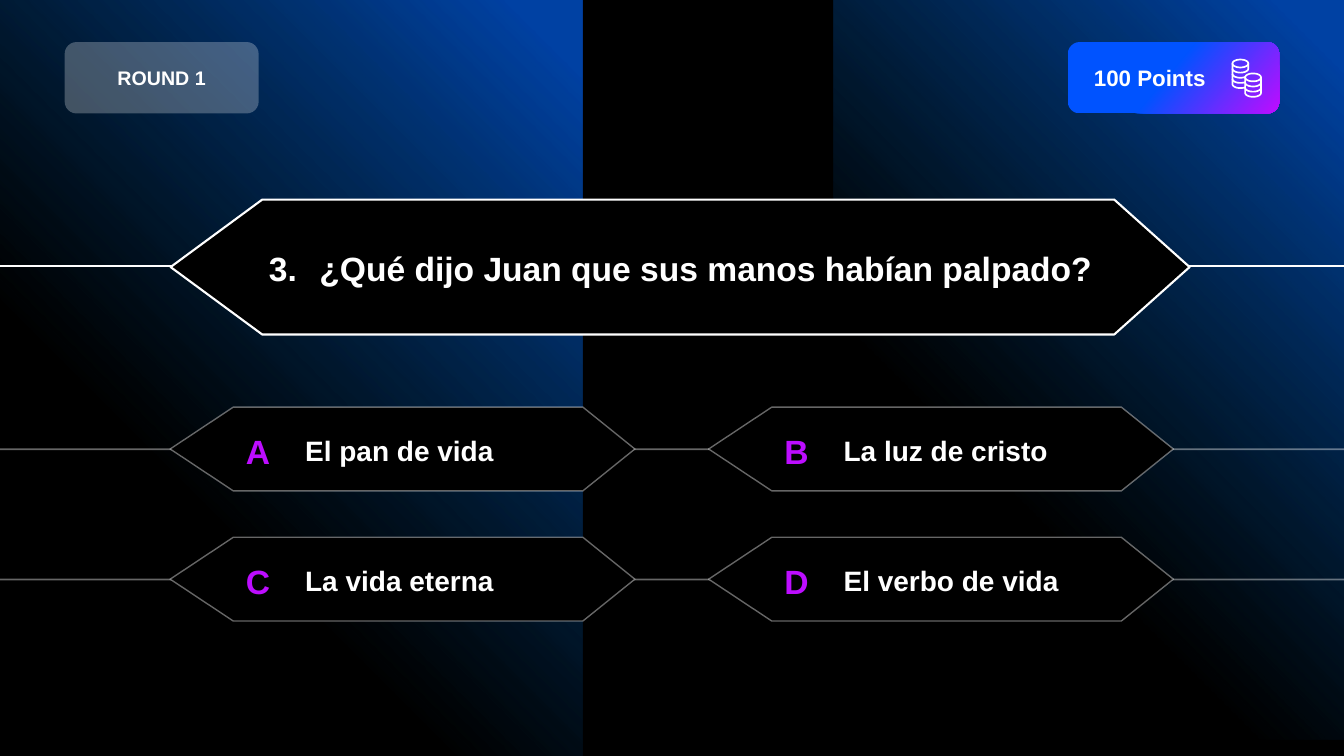
import math
from dataclasses import dataclass

from lxml import etree
from pptx import Presentation
from pptx.dml.color import RGBColor
from pptx.enum import shapes, text
from pptx.oxml import ns
from pptx.util import Cm, Pt


@dataclass(frozen=True)
class Theme:
    font: str = "Arial"
    black: str = "000000"
    white: str = "FFFFFF"
    violet: str = "BD0DFF"
    blue: str = "0053FF"
    glow: str = "0066FF"
    glow_edge: str = "0070C0"
    large: int = 24
    answer: int = 20
    points: int = 16
    round: int = 14
    frame_line: float = 1.5
    answer_line: float = 1.25
    answer_frame: float = 1
    coin_line: float = 1.2
    faint: int = 40
    badge_alpha: int = 26


THEME = Theme()
SLIDE_WIDTH, SLIDE_HEIGHT = 33.87, 19.05
ANSWERS = [
    [("A", "El pan de vida"), ("B", "La luz de cristo")],
    [("C", "La vida eterna"), ("D", "El verbo de vida")],
]


def lengths(*values):
    return [Cm(value) for value in values]


def set_alpha(parent, percent):
    """Make every plain colour below the XML parent partly transparent."""
    for color in parent.iter(ns.qn("a:srgbClr")):
        etree.SubElement(color, ns.qn("a:alpha")).set("val", str(percent * 1000))


def paint(shape, color, alpha=100):
    shape.fill.solid()
    shape.fill.fore_color.rgb = RGBColor.from_string(color)
    if alpha < 100:
        set_alpha(shape.element.spPr.find(ns.qn("a:solidFill")), alpha)


def draw_line(shape, width, alpha=100):
    shape.line.color.rgb = RGBColor.from_string(THEME.white)
    shape.line.width = Pt(width)
    if alpha < 100:
        set_alpha(shape.element.spPr.find(ns.qn("a:ln")), alpha)


def paint_gradient(shape, stops, angle=None):
    """Fill with (position, colour, alpha) stops: linear, or round from top right."""
    gradient = etree.Element(ns.qn("a:gradFill"), rotWithShape="1")
    stop_list = etree.SubElement(gradient, ns.qn("a:gsLst"))
    for position, color, alpha in stops:
        stop = etree.SubElement(stop_list, ns.qn("a:gs"), pos=str(position * 1000))
        etree.SubElement(stop, ns.qn("a:srgbClr"), val=color)
        if alpha < 100:
            set_alpha(stop, alpha)
    if angle is None:
        circle = etree.SubElement(gradient, ns.qn("a:path"))
        circle.set("path", "circle")
        etree.SubElement(circle, ns.qn("a:fillToRect"), l="100000", b="100000")
    else:
        etree.SubElement(gradient, ns.qn("a:lin"), ang=str(angle * 60000), scaled="0")
    shape.element.spPr.find(ns.qn("a:prstGeom")).addnext(gradient)


def write(shape, wording, size, color=THEME.white, align=text.PP_ALIGN.LEFT):
    frame = shape.text_frame
    frame.word_wrap = True
    frame.vertical_anchor = text.MSO_ANCHOR.MIDDLE
    paragraph = frame.paragraphs[0]
    paragraph.alignment = align
    run = paragraph.add_run()
    run.text = wording
    run.font.name = THEME.font
    run.font.size = Pt(size)
    run.font.bold = True
    run.font.color.rgb = RGBColor.from_string(color)


def add_text(slide, box, wording, size, **style):
    write(slide.shapes.add_textbox(*lengths(*box)), wording, size, **style)


def add_plain_shape(slide, kind, box):
    shape = slide.shapes.add_shape(kind, *lengths(*box))
    shape.shadow.inherit = False
    shape.line.fill.background()
    return shape


def add_glow_panel(slide, box):
    panel = add_plain_shape(slide, shapes.MSO_SHAPE.RECTANGLE, box)
    paint_gradient(panel, [(0, THEME.glow, 63), (6, THEME.glow, 63),
                           (66, THEME.glow_edge, 0), (100, THEME.black, 0)])


def add_rail(slide, y, width, alpha=100):
    """Draw a horizontal line over the whole slide."""
    rail = slide.shapes.add_connector(
        shapes.MSO_CONNECTOR.STRAIGHT, *lengths(0, y, SLIDE_WIDTH, y))
    draw_line(rail, width, alpha)
    etree.SubElement(rail.element.spPr, ns.qn("a:effectLst"))


def add_frame(slide, box, left_tip, right_tip, width, alpha=100):
    """Draw a black hexagon whose two tips have their own lengths."""
    left, top, across, height = box
    right, middle, bottom = left + across, top + height / 2, top + height
    corners = [(left + left_tip, top), (right - right_tip, top), (right, middle),
               (right - right_tip, bottom), (left + left_tip, bottom)]
    builder = slide.shapes.build_freeform(*lengths(left, middle))
    builder.add_line_segments([lengths(*corner) for corner in corners])
    frame = builder.convert_to_shape()
    frame.shadow.inherit = False
    paint(frame, THEME.black)
    draw_line(frame, width, alpha)


def add_answer(slide, left, top, letter, answer):
    add_frame(slide, (left, top, 11.71, 2.11), 1.59, 1.31,
              THEME.answer_frame, THEME.faint)
    add_text(slide, (left + 3.15, top + 0.08, 8.4, 2.03), answer, THEME.answer)
    add_text(slide, (left + 1.55, top + 0.08, 1.32, 2.03), letter, THEME.large,
             color=THEME.violet, align=text.PP_ALIGN.CENTER)


def add_badge(slide, box):
    return add_plain_shape(slide, shapes.MSO_SHAPE.ROUNDED_RECTANGLE, box)


def coin_rim(center_x, center_y, start, end):
    """Give the points of an elliptical arc, in degrees, clockwise from the right."""
    step = 12 if end > start else -12
    angles = [math.radians(angle) for angle in range(start, end + step, step)]
    return [lengths(center_x + 0.2 * math.cos(angle), center_y + 0.1 * math.sin(angle))
            for angle in angles]


def add_coins(slide):
    coin_height = 0.13
    curves = []
    for center_x, top, coins, hidden_to in ((31.26, 1.6, 4, 48), (31.58, 1.95, 3, 0)):
        curves.append(coin_rim(center_x, top, 0, 360))
        for coin in range(1, coins + 1):
            end = 0 if coin == 1 else hidden_to
            rim = coin_rim(center_x, top + coin * coin_height, 180, end)
            side_top = top + (coin - 1) * coin_height
            curve = [lengths(center_x - 0.2, side_top)] + rim
            if end == 0:
                curve.append(lengths(center_x + 0.2, side_top))
            curves.append(curve)
    builder = slide.shapes.build_freeform(*curves[0][0])
    for curve in curves:
        builder.move_to(*curve[0])
        builder.add_line_segments(curve[1:], close=False)
    icon = builder.convert_to_shape()
    icon.shadow.inherit = False
    icon.fill.background()
    draw_line(icon, THEME.coin_line)


def main():
    presentation = Presentation()
    presentation.slide_width, presentation.slide_height = lengths(SLIDE_WIDTH, SLIDE_HEIGHT)
    slide = presentation.slides.add_slide(presentation.slide_layouts[6])
    paint(slide.background, THEME.black)

    add_glow_panel(slide, (0, 0, 14.69, SLIDE_HEIGHT))
    add_glow_panel(slide, (21, 0, 12.87, 18.64))

    add_rail(slide, 6.71, THEME.frame_line)
    add_frame(slide, (4.3, 5.03, 25.68, 3.4), 2.31, 1.9, THEME.frame_line)
    add_text(slide, (6.53, 5.06, 21.39, 3.38),
             "3.\t¿Qué dijo Juan que sus manos habían palpado?", THEME.large)

    for row, answers in enumerate(ANSWERS):
        top = 10.26 + row * 3.28
        add_rail(slide, top + 1.06, THEME.answer_line, THEME.faint)
        for column, (letter, answer) in enumerate(answers):
            add_answer(slide, 4.29 + column * 13.57, top, letter, answer)

    points = add_badge(slide, (26.91, 1.06, 5.33, 1.8))
    paint_gradient(points, [(0, THEME.blue, 100), (47, THEME.blue, 100),
                            (99, THEME.violet, 100), (100, THEME.violet, 100)], angle=40)
    write(points, "100 Points", THEME.points)
    points.text_frame.margin_left = Cm(0.57)
    add_coins(slide)

    round_badge = add_badge(slide, (1.63, 1.06, 4.89, 1.8))
    paint(round_badge, THEME.white, THEME.badge_alpha)
    write(round_badge, "ROUND 1", THEME.round, align=text.PP_ALIGN.CENTER)

    presentation.save("out.pptx")


if __name__ == "__main__":
    main()
